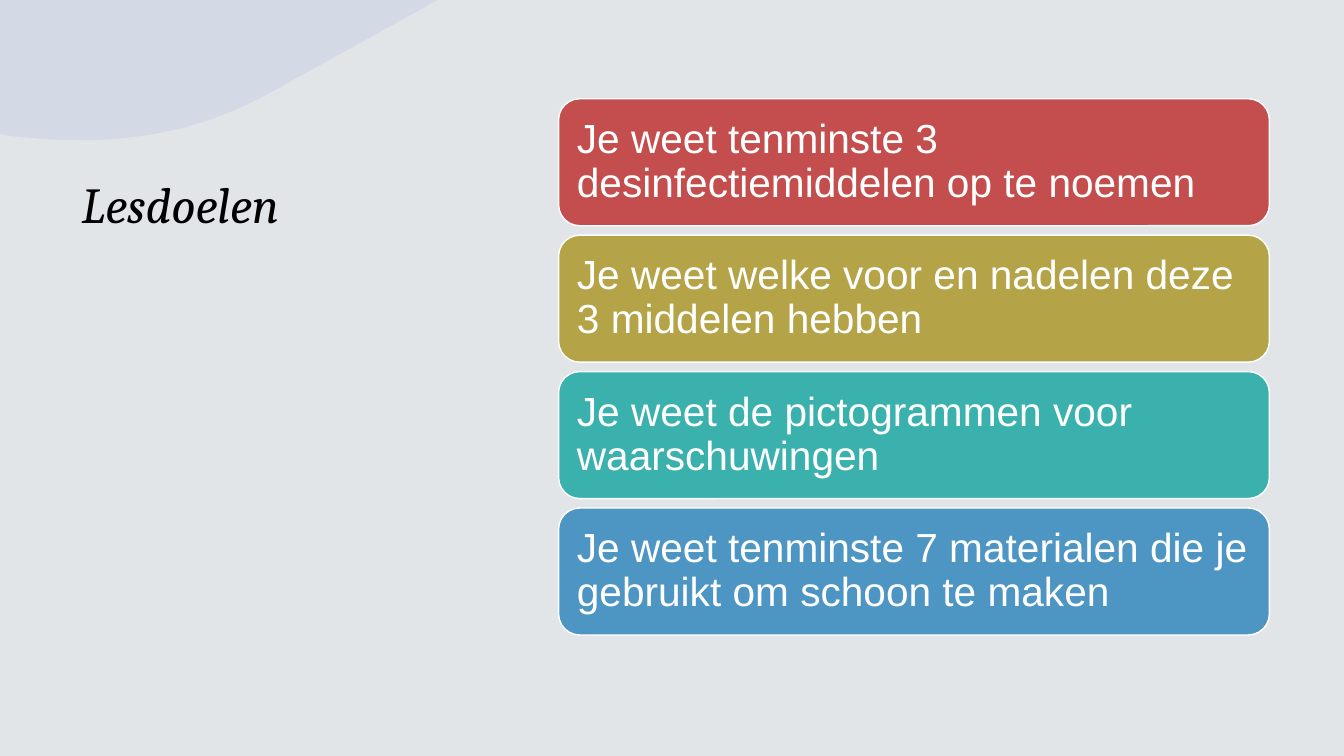
from dataclasses import dataclass

import pptx
import pptx.dml.color
import pptx.enum.shapes
import pptx.enum.text
import pptx.oxml.ns
import pptx.slide
import pptx.util
from lxml import etree

Inches = pptx.util.Inches
Point = tuple[float, float]


@dataclass(frozen=True)
class Theme:
    background: str = "E2E5E8"
    corner: str = "ADB7E4"
    corner_alpha: int = 25
    title_color: str = "000000"
    card_text: str = "FFFFFF"
    title_font: str = "Cambria"
    card_font: str = "Arial"
    title_size: int = 36
    card_size: int = 29


@dataclass(frozen=True)
class Goal:
    text: str
    color: str


THEME = Theme()

GOALS = [
    Goal("Je weet tenminste 3 desinfectiemiddelen op te noemen", "C34E4D"),
    Goal("Je weet welke voor en nadelen deze 3 middelen hebben", "B4A347"),
    Goal("Je weet de pictogrammen voor waarschuwingen", "3BB1AE"),
    Goal("Je weet tenminste 7 materialen die je gebruikt om schoon te maken", "4D95C3"),
]
CARD_LEFT, CARD_WIDTH, CARD_HEIGHT = 5.54, 7.05, 1.26
FIRST_TOP, LAST_TOP = 0.98, 5.04

# Cubic curves along the lower edge of the corner, from right to left
CORNER_CURVES: list[tuple[Point, Point, Point, Point]] = [
    ((4.32, 0.01), (3.77, 0.32), (3.2, 0.63), (2.68, 0.92)),
    ((2.68, 0.92), (2.32, 1.12), (1.95, 1.25), (1.58, 1.32)),
    ((1.58, 1.32), (1.3, 1.37), (1.02, 1.4), (0.74, 1.39)),
    ((0.74, 1.39), (0.53, 1.39), (0.31, 1.37), (0.1, 1.35)),
]
CURVE_STEPS = 12


def rgb(color: str) -> pptx.dml.color.RGBColor:
    return pptx.dml.color.RGBColor.from_string(color)


def curve_points(curve: tuple[Point, Point, Point, Point]) -> list[Point]:
    """Sample a cubic Bezier curve, both ends included."""
    points = []
    for step in range(CURVE_STEPS + 1):
        t = step / CURVE_STEPS
        weights = ((1 - t) ** 3, 3 * t * (1 - t) ** 2, 3 * t**2 * (1 - t), t**3)
        points.append(tuple(
            sum(w * p[axis] for w, p in zip(weights, curve)) for axis in (0, 1)))
    return points


def add_corner(slide: pptx.slide.Slide) -> None:
    outline = [(4.35, 0)]
    for curve in CORNER_CURVES:
        outline += curve_points(curve)
    outline.append((0, 1.33))
    builder = slide.shapes.build_freeform(Inches(0), Inches(0))
    builder.add_line_segments([(Inches(x), Inches(y)) for x, y in outline])
    corner = builder.convert_to_shape()
    corner.shadow.inherit = False
    corner.line.fill.background()
    corner.fill.solid()
    corner.fill.fore_color.rgb = rgb(THEME.corner)
    color = corner.fill._xPr.find(".//" + pptx.oxml.ns.qn("a:srgbClr"))
    alpha = etree.SubElement(color, pptx.oxml.ns.qn("a:alpha"))
    alpha.set("val", str(THEME.corner_alpha * 1000))


def add_title(slide: pptx.slide.Slide, text: str) -> None:
    title = slide.shapes.title
    title.left, title.top = Inches(0.71), Inches(1.67)
    title.width, title.height = Inches(4.84), Inches(4.97)
    frame = title.text_frame
    frame.text = text
    frame.vertical_anchor = pptx.enum.text.MSO_ANCHOR.TOP
    frame.auto_size = pptx.enum.text.MSO_AUTO_SIZE.NONE
    paragraph = frame.paragraphs[0]
    paragraph.alignment = pptx.enum.text.PP_ALIGN.LEFT
    paragraph.font.name = THEME.title_font
    paragraph.font.size = pptx.util.Pt(THEME.title_size)
    paragraph.font.italic = True
    paragraph.font.color.rgb = rgb(THEME.title_color)


def add_goal(slide: pptx.slide.Slide, goal: Goal, top: float) -> None:
    card = slide.shapes.add_shape(
        pptx.enum.shapes.MSO_SHAPE.ROUNDED_RECTANGLE,
        Inches(CARD_LEFT), Inches(top), Inches(CARD_WIDTH), Inches(CARD_HEIGHT))
    card.shadow.inherit = False
    card.fill.solid()
    card.fill.fore_color.rgb = rgb(goal.color)
    card.line.color.rgb = rgb(THEME.card_text)
    card.line.width = pptx.util.Pt(1)
    frame = card.text_frame
    frame.word_wrap = True
    frame.vertical_anchor = pptx.enum.text.MSO_ANCHOR.MIDDLE
    # The rounded corners inset the text area by a further 0.06 inch
    frame.margin_left = frame.margin_right = Inches(0.12)
    frame.margin_top = frame.margin_bottom = Inches(0.12)
    frame.text = goal.text
    paragraph = frame.paragraphs[0]
    paragraph.alignment = pptx.enum.text.PP_ALIGN.LEFT
    paragraph.line_spacing = 0.9
    paragraph.font.name = THEME.card_font
    paragraph.font.size = pptx.util.Pt(THEME.card_size)
    paragraph.font.color.rgb = rgb(THEME.card_text)


def main() -> None:
    deck = pptx.Presentation()
    deck.slide_width, deck.slide_height = Inches(13.33), Inches(7.5)
    slide = deck.slides.add_slide(deck.slide_layouts.get_by_name("Title Only"))
    slide.background.fill.solid()
    slide.background.fill.fore_color.rgb = rgb(THEME.background)
    add_title(slide, "Lesdoelen")
    add_corner(slide)
    pitch = (LAST_TOP - FIRST_TOP) / (len(GOALS) - 1)
    for row, goal in enumerate(GOALS):
        add_goal(slide, goal, FIRST_TOP + row * pitch)
    deck.save("out.pptx")


if __name__ == "__main__":
    main()
